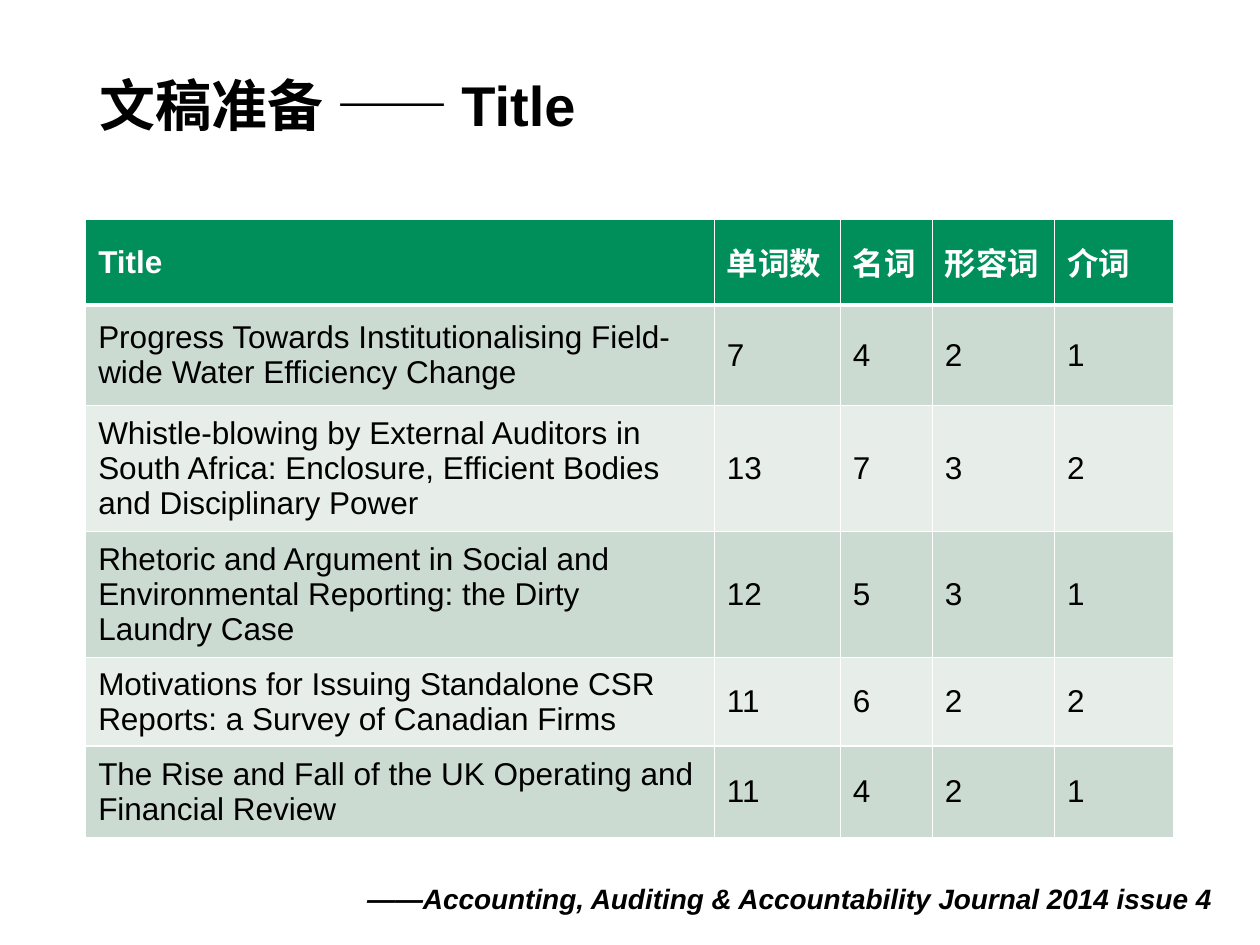
"""Builds a slide with a table of word counts in journal article titles."""
from dataclasses import dataclass

import lxml.etree
import pptx
import pptx.dml.color
import pptx.enum.text
import pptx.oxml.ns
import pptx.util

Inches = pptx.util.Inches
Pt = pptx.util.Pt
qn = pptx.oxml.ns.qn


@dataclass(frozen=True)
class Theme:
    latin: str = "Arial"
    cjk: str = "Noto Sans CJK SC"
    black: str = "000000"
    white: str = "FFFFFF"
    header: str = "008F5A"
    bands: tuple = ("CCDBD2", "E7EEEA")
    title_size: int = 32
    table_size: int = 18
    source_size: int = 16


theme = Theme()


def style_font(font, name, size, color, bold):
    font.name = name
    font.size = Pt(size)
    font.bold = bold
    font.color.rgb = pptx.dml.color.RGBColor.from_string(color)
    if name == theme.cjk:
        latin = font._element.find(qn("a:latin"))
        ea = lxml.etree.Element(qn("a:ea"), typeface=name)
        latin.addnext(ea)


def set_borders(cell, top, bottom):
    tcPr = cell._tc.get_or_add_tcPr()
    widths = {"a:lnL": 1, "a:lnR": 1, "a:lnT": top, "a:lnB": bottom}
    for i, (tag, width) in enumerate(widths.items()):
        ln = lxml.etree.Element(qn(tag), w=str(Pt(width)))
        fill = lxml.etree.SubElement(ln, qn("a:solidFill"))
        lxml.etree.SubElement(fill, qn("a:srgbClr"), val=theme.white)
        tcPr.insert(i, ln)


prs = pptx.Presentation()
prs.slide_width = Inches(10)
prs.slide_height = Inches(7.5)
s = prs.slides.add_slide(prs.slide_layouts[6])

rows = [
    ("Title", "单词数", "名词", "形容词", "介词"),
    ("Progress Towards Institutionalising Field-wide Water Efficiency Change", 7, 4, 2, 1),
    ("Whistle-blowing by External Auditors in South Africa: Enclosure, "
     "Efficient Bodies and Disciplinary Power", 13, 7, 3, 2),
    ("Rhetoric and Argument in Social and Environmental Reporting: "
     "the Dirty Laundry Case", 12, 5, 3, 1),
    ("Motivations for Issuing Standalone CSR Reports: a Survey of Canadian Firms", 11, 6, 2, 2),
    ("The Rise and Fall of the UK Operating and Financial Review", 11, 4, 2, 1),
]
col_widths = [4.99, 1, 0.73, 0.97, 0.95]
row_heights = [0.68, 0.8, 1, 1, 0.7, 0.73]

table = s.shapes.add_table(
    len(rows), len(col_widths), Inches(0.68), Inches(1.74),
    Inches(sum(col_widths)), Inches(sum(row_heights))).table
for column, width in zip(table.columns, col_widths):
    column.width = Inches(width)
for row, height in zip(table.rows, row_heights):
    row.height = Inches(height)

for r, values in enumerate(rows):
    is_header = r == 0
    fill = theme.header if is_header else theme.bands[(r - 1) % 2]
    for c, value in enumerate(values):
        cell = table.cell(r, c)
        cell.text = str(value)
        cell.vertical_anchor = pptx.enum.text.MSO_ANCHOR.MIDDLE
        cell.fill.solid()
        cell.fill.fore_color.rgb = pptx.dml.color.RGBColor.from_string(fill)
        set_borders(cell, 3 if r == 1 else 1, 3 if is_header else 1)
        name = theme.cjk if is_header and c > 0 else theme.latin
        color = theme.white if is_header else theme.black
        style_font(cell.text_frame.paragraphs[0].font, name, theme.table_size, color, is_header)

tf = s.shapes.add_textbox(Inches(0.43), Inches(6.95), Inches(9.29), Inches(0.37)).text_frame
tf.word_wrap = True
p = tf.paragraphs[0]
p.text = "——Accounting, Auditing & Accountability Journal 2014 issue 4"
p.alignment = pptx.enum.text.PP_ALIGN.RIGHT
style_font(p.font, theme.latin, theme.source_size, theme.black, True)
p.font.italic = True

tf = s.shapes.add_textbox(Inches(0.79), Inches(0.02), Inches(8.07), Inches(1.07)).text_frame
tf.word_wrap = True
tf.vertical_anchor = pptx.enum.text.MSO_ANCHOR.BOTTOM
tf.margin_left = tf.margin_top = tf.margin_right = tf.margin_bottom = 0
p = tf.paragraphs[0]
for text, name in (("文稿准备 —— ", theme.cjk), ("Title", theme.latin)):
    r = p.add_run()
    r.text = text
    style_font(r.font, name, theme.title_size, theme.black, True)

prs.save("out.pptx")
